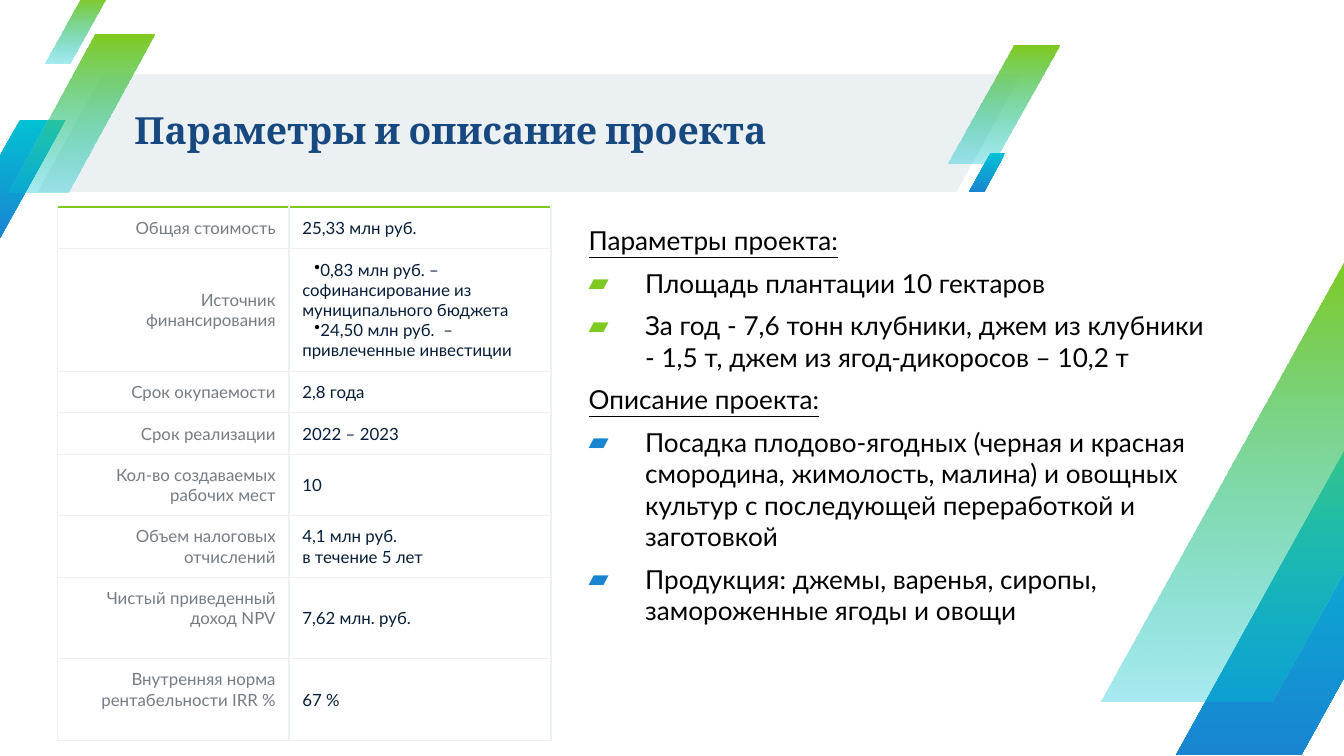
from lxml import etree
from pptx import Presentation
from pptx.dml.color import RGBColor
from pptx.enum.shapes import MSO_SHAPE
from pptx.enum.text import MSO_ANCHOR, MSO_AUTO_SIZE, PP_ALIGN
from pptx.oxml.ns import qn
from pptx.util import Inches, Pt

PARALLELOGRAM = MSO_SHAPE.PARALLELOGRAM
MIDDLE, TOP = MSO_ANCHOR.MIDDLE, MSO_ANCHOR.TOP
NO_FIT = MSO_AUTO_SIZE.NONE
LEFT, RIGHT = PP_ALIGN.LEFT, PP_ALIGN.RIGHT

BAND, GREEN, CYAN, BLUE = "EBF0F3", "7FCA20", "02C1D3", "1985D2"
NAVY, GRAY, INK, BLACK = "184880", "757C83", "061E3A", "000000"

GREEN_FADE = (GREEN, CYAN, 34)
BLUE_FADE = (CYAN, BLUE, 100)
STRIPES = [
    (-0.34, 0.89, 0.83, 0.88, BLUE_FADE),
    (7.05, 0.34, 0.83, 0.88, GREEN_FADE),
    (0.06, 0.26, 1.09, 1.17, GREEN_FADE),
    (0.33, -0.02, 0.46, 0.49, GREEN_FADE),
    (7.21, 1.14, 0.27, 0.29, BLUE_FADE),
    (8.75, 3.2, 2.27, 2.42, BLUE_FADE),
    (8.19, 1.92, 3.1, 3.3, GREEN_FADE),
]

TABLE_HEIGHT = 3.97
ROWS = [
    (0.31, "Общая стоимость", ["25,33 млн руб."]),
    (0.92, "Источник финансирования",
     ["0,83 млн руб. – софинансирование из муниципального бюджета",
      "24,50 млн руб.  – привлеченные инвестиции"]),
    (0.31, "Срок окупаемости", ["2,8 года"]),
    (0.31, "Срок реализации", ["2022 – 2023"]),
    (0.46, "Кол-во создаваемых рабочих мест", ["10"]),
    (0.46, "Объем налоговых отчислений", ["4,1 млн руб.", "в течение 5 лет"]),
    (0.61, "Чистый приведенный доход NPV", ["7,62 млн. руб."]),
    (0.61, "Внутренняя норма рентабельности IRR %", ["67 %"]),
]
FUNDING_ROW = 1
RAISED_LABEL_ROWS = (6, 7)

SECTIONS = [
    ("Параметры проекта:", GREEN,
     ["Площадь плантации 10 гектаров",
      "За год - 7,6 тонн клубники, джем из клубники - 1,5 т, "
      "джем из ягод-дикоросов – 10,2 т"]),
    ("Описание проекта:", BLUE,
     ["Посадка плодово-ягодных (черная и красная смородина, жимолость, малина) "
      "и овощных культур с последующей переработкой и заготовкой",
      "Продукция: джемы, варенья, сиропы, замороженные ягоды и овощи"]),
]


def rgb(value):
    return RGBColor.from_string(value)


def add_text(tf, text, size, color, font="Lato", bold=False, underline=False,
             align=LEFT, before=0, line=None, margin=0, indent=0,
             bullet=None, bullet_color=BLACK):
    p = tf.paragraphs[0]
    if p.runs:
        p = tf.add_paragraph()
    p.alignment = align
    p.space_before = Pt(before)
    if line:
        p.line_spacing = line
    pPr = p._p.get_or_add_pPr()
    pPr.set("marL", str(Inches(margin)))
    pPr.set("indent", str(Inches(indent)))
    if bullet:
        clr = etree.SubElement(pPr, qn("a:buClr"))
        etree.SubElement(clr, qn("a:srgbClr"), val=bullet_color)
        etree.SubElement(pPr, qn("a:buChar"), char=bullet)
    else:
        etree.SubElement(pPr, qn("a:buNone"))
    r = p.add_run()
    r.text = text
    r.font.name, r.font.size = font, Pt(size)
    r.font.bold, r.font.underline = bold, underline
    r.font.color.rgb = rgb(color)


def add_parallelogram(s, x, y, w, h, slant):
    sp = s.shapes.add_shape(PARALLELOGRAM, Inches(x), Inches(y), Inches(w), Inches(h))
    sp.adjustments[0] = slant
    sp.shadow.inherit = False
    sp.line.fill.background()
    return sp


def add_stripe(s, x, y, w, h, fade):
    start, end, opacity = fade
    sp = add_parallelogram(s, x, y, w, h, 0.59)
    sp.fill.gradient()
    sp.fill.gradient_angle = 270
    for stop, color in zip(sp.fill.gradient_stops, (start, end)):
        stop.color.rgb = rgb(color)
    if opacity < 100:
        clr = sp._element.spPr.findall(".//" + qn("a:srgbClr"))[-1]
        etree.SubElement(clr, qn("a:alpha"), val=str(opacity * 1000))


def place(s, sp, x, y, w, h, anchor):
    sp.left, sp.top, sp.width, sp.height = Inches(x), Inches(y), Inches(w), Inches(h)
    tf = sp.text_frame
    tf.word_wrap, tf.auto_size, tf.vertical_anchor = True, NO_FIT, anchor
    tf.margin_left = tf.margin_top = tf.margin_right = tf.margin_bottom = 0
    s.shapes._spTree.append(sp._element)
    return tf


def set_border(cell, side, color, width):
    ln = etree.SubElement(cell._tc.get_or_add_tcPr(), qn("a:ln" + side), w=str(Pt(width)))
    fill = etree.SubElement(ln, qn("a:solidFill"))
    etree.SubElement(fill, qn("a:srgbClr"), val=color)


def format_cell(cell, first_row, bottom=0.07):
    for side in "LRTB":
        accent = first_row and side == "T"
        set_border(cell, side, GREEN if accent else BAND, 1.5 if accent else 0.75)
    cell.fill.background()
    cell.vertical_anchor = MIDDLE
    cell.margin_left = cell.margin_right = Inches(0.1)
    cell.margin_top, cell.margin_bottom = Inches(0.07), Inches(bottom)


def add_parameters_table(s):
    scale = TABLE_HEIGHT / sum(row[0] for row in ROWS)
    table = s.shapes.add_table(len(ROWS), 2, Inches(0.43), Inches(1.54),
                               Inches(3.67), Inches(TABLE_HEIGHT)).table
    table.first_row = table.horz_banding = False
    for col, width in zip(table.columns, (1.72, 1.95)):
        col.width = Inches(width)
    for i, (row_height, label, values) in enumerate(ROWS):
        table.rows[i].height = Inches(row_height * scale)
        name, value = table.cell(i, 0), table.cell(i, 1)
        format_cell(name, i == 0, 0.22 if i in RAISED_LABEL_ROWS else 0.07)
        format_cell(value, i == 0)
        add_text(name.text_frame, label, 9, GRAY, align=RIGHT)
        listed = {"bullet": "•", "indent": 0.09} if i == FUNDING_ROW else {}
        for text in values:
            add_text(value.text_frame, text, 9, INK, **listed)


def add_description(tf):
    for heading, color, items in SECTIONS:
        add_text(tf, heading, 14, BLACK, underline=True, before=6, margin=0.08)
        for item in items:
            add_text(tf, item, 14, BLACK, before=6, margin=0.5, indent=-0.42,
                     bullet="▰", bullet_color=color)


def main():
    prs = Presentation()
    prs.slide_width = Inches(10)
    prs.slide_height = prs.slide_width * 9 // 16
    s = prs.slides.add_slide(prs.slide_layouts[1])
    title, body = s.placeholders

    band = add_parallelogram(s, 0.28, 0.55, 7.32, 0.88, 0.55)
    band.fill.solid()
    band.fill.fore_color.rgb = rgb(BAND)
    for stripe in STRIPES:
        add_stripe(s, *stripe)

    tf = place(s, title, 1, 0.54, 6.59, 0.89, MIDDLE)
    add_text(tf, "Параметры и описание проекта", 20, NAVY, font="Cambria",
             bold=True, line=0.9)
    add_parameters_table(s)
    add_description(place(s, body, 4.3, 1.67, 4.78, 3.28, TOP))
    prs.save("out.pptx")


if __name__ == "__main__":
    main()
